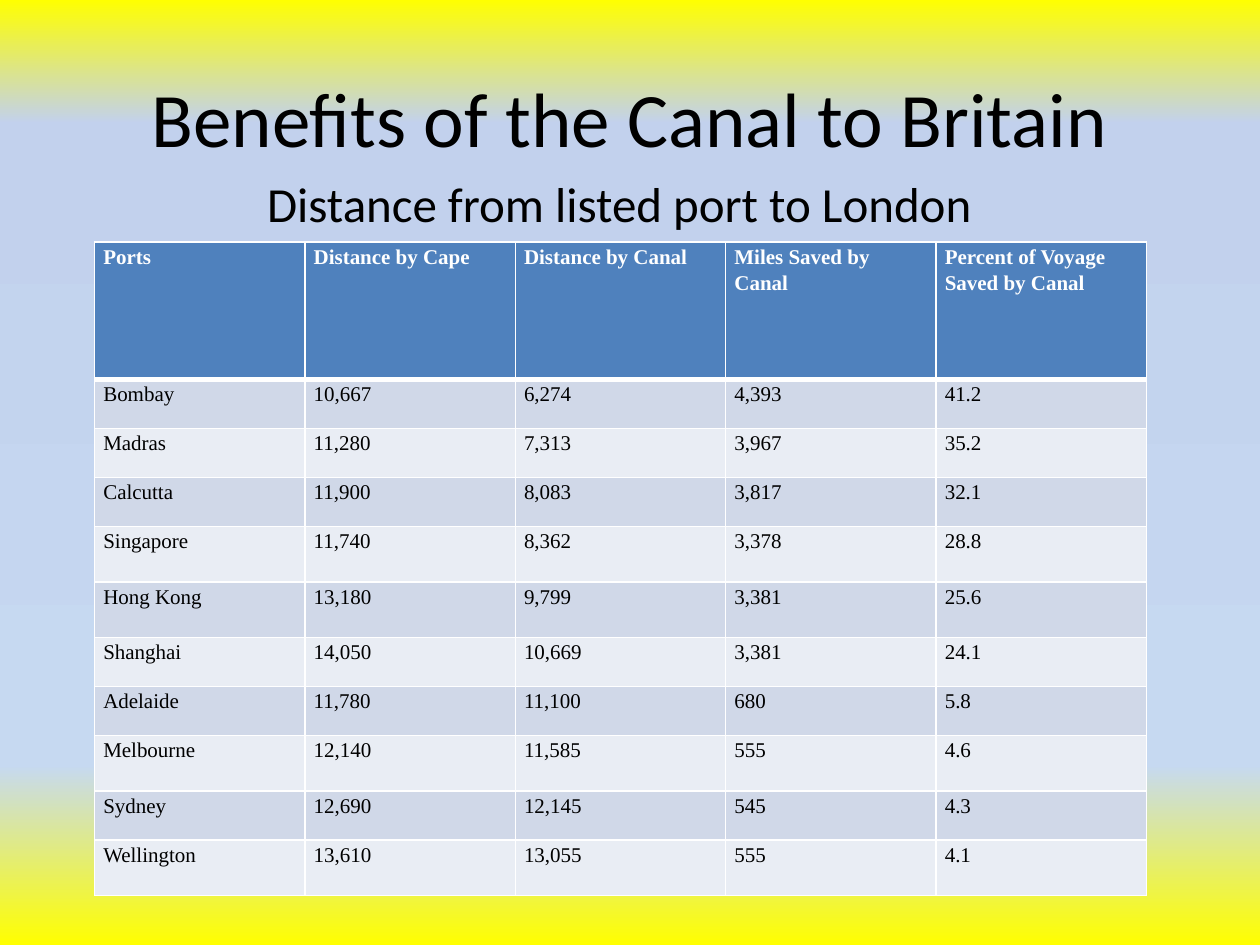
from dataclasses import dataclass

from lxml import etree
from pptx import Presentation
from pptx import util as u
from pptx.dml.color import RGBColor
from pptx.enum import text
from pptx.oxml import ns


@dataclass(frozen=True)
class Theme:
    heading_font: str = "Calibri"
    table_font: str = "Times New Roman"
    title_size: int = 44
    subtitle_size: int = 28
    table_size: int = 12
    black: str = "000000"
    white: str = "FFFFFF"
    header_fill: str = "4F81BD"
    bands: tuple = ("D0D8E8", "E9EDF4")
    background: tuple = ((0, "FFFF00"), (13, "C2D1ED"), (81, "C6D9F1"), (100, "FFFF00"))
    thin_line: int = 1
    thick_line: int = 3


@dataclass(frozen=True)
class Port:
    name: str
    by_cape: str
    by_canal: str
    miles_saved: str
    percent_saved: str
    height: float = 0.39

    def values(self) -> list[str]:
        return [self.name, self.by_cape, self.by_canal, self.miles_saved, self.percent_saved]


THEME = Theme()
TALL_ROW = 0.44
HEADER_HEIGHT = 1.09
COLUMN_WIDTH = 1.67
HEADERS = ["Ports", "Distance by Cape", "Distance by Canal", "Miles Saved by Canal",
           "Percent of Voyage Saved by Canal"]
PORTS = [
    Port("Bombay", "10,667", "6,274", "4,393", "41.2"),
    Port("Madras", "11,280", "7,313", "3,967", "35.2"),
    Port("Calcutta", "11,900", "8,083", "3,817", "32.1"),
    Port("Singapore", "11,740", "8,362", "3,378", "28.8", TALL_ROW),
    Port("Hong Kong", "13,180", "9,799", "3,381", "25.6", TALL_ROW),
    Port("Shanghai", "14,050", "10,669", "3,381", "24.1"),
    Port("Adelaide", "11,780", "11,100", "680", "5.8"),
    Port("Melbourne", "12,140", "11,585", "555", "4.6", TALL_ROW),
    Port("Sydney", "12,690", "12,145", "545", "4.3"),
    Port("Wellington", "13,610", "13,055", "555", "4.1", TALL_ROW),
]


def set_attributes(target, values: dict) -> None:
    for name, value in values.items():
        setattr(target, name, value)


def write_text(frame, content: str, size: int, font: str, color: str, bold: bool = False,
               **paragraph_format) -> None:
    paragraph = frame.paragraphs[0]
    set_attributes(paragraph, paragraph_format)
    run = paragraph.add_run()
    run.text = content
    set_attributes(run.font, {"size": u.Pt(size), "name": font, "bold": bold})
    run.font.color.rgb = RGBColor.from_string(color)


def paint_background(slide) -> None:
    """Fill the slide with the theme's gradient, running from top to bottom."""
    fill = slide.background.fill
    fill.gradient()
    fill.gradient_angle = 270
    stops = slide.background._cSld.find(".//" + ns.qn("a:gsLst"))
    for stop in list(stops):
        stops.remove(stop)
    for percent, color in THEME.background:
        stop = etree.SubElement(stops, ns.qn("a:gs"), pos=str(percent * 1000))
        etree.SubElement(stop, ns.qn("a:srgbClr"), val=color)


def add_headings(slide) -> None:
    title = slide.shapes.title
    set_attributes(title, {"left": u.Inches(0.5), "top": u.Inches(0.3),
                           "width": u.Inches(9), "height": u.Inches(1.25)})
    title.text_frame.vertical_anchor = text.MSO_ANCHOR.MIDDLE
    write_text(title.text_frame, "Benefits of the Canal to Britain", THEME.title_size,
               THEME.heading_font, THEME.black, alignment=text.PP_ALIGN.CENTER)
    subtitle = slide.shapes.add_textbox(u.Inches(0.83), u.Inches(1.33),
                                        u.Inches(8.17), u.Inches(0.57))
    set_attributes(subtitle.text_frame, {"word_wrap": True,
                                         "auto_size": text.MSO_AUTO_SIZE.SHAPE_TO_FIT_TEXT})
    write_text(subtitle.text_frame, "Distance from listed port to London", THEME.subtitle_size,
               THEME.heading_font, THEME.black, alignment=text.PP_ALIGN.CENTER)


def add_borders(cell, top: int, bottom: int) -> None:
    """Draw white borders; call before filling, as the fill must follow the lines."""
    properties = cell._tc.get_or_add_tcPr()
    widths = {"L": THEME.thin_line, "R": THEME.thin_line, "T": top, "B": bottom}
    for side, width in widths.items():
        line = etree.SubElement(properties, ns.qn(f"a:ln{side}"), w=str(u.Pt(width)))
        fill = etree.SubElement(line, ns.qn("a:solidFill"))
        etree.SubElement(fill, ns.qn("a:srgbClr"), val=THEME.white)


def format_cell(cell, content: str, row: int) -> None:
    header = row == 0
    set_attributes(cell, {"margin_left": u.Inches(0.07), "margin_right": u.Inches(0.07),
                          "margin_top": 0, "margin_bottom": 0})
    add_borders(cell, top=THEME.thick_line if row == 1 else THEME.thin_line,
                bottom=THEME.thick_line if header else THEME.thin_line)
    cell.fill.solid()
    color = THEME.header_fill if header else THEME.bands[(row - 1) % 2]
    cell.fill.fore_color.rgb = RGBColor.from_string(color)
    write_text(cell.text_frame, content, THEME.table_size, THEME.table_font,
               THEME.white if header else THEME.black, bold=header, line_spacing=1.15)


def add_distance_table(slide) -> None:
    rows = [HEADERS] + [port.values() for port in PORTS]
    heights = [HEADER_HEIGHT] + [port.height for port in PORTS]
    table = slide.shapes.add_table(
        len(rows), len(HEADERS), u.Inches(0.75), u.Inches(1.92),
        u.Inches(COLUMN_WIDTH * len(HEADERS)), u.Inches(sum(heights))).table
    for column in table.columns:
        column.width = u.Inches(COLUMN_WIDTH)
    for row, (values, height) in enumerate(zip(rows, heights)):
        table.rows[row].height = u.Inches(height)
        for column, content in enumerate(values):
            format_cell(table.cell(row, column), content, row)


def main() -> None:
    presentation = Presentation()
    set_attributes(presentation, {"slide_width": u.Inches(10), "slide_height": u.Inches(7.5)})
    slide = presentation.slides.add_slide(presentation.slide_layouts.get_by_name("Title Only"))
    paint_background(slide)
    add_distance_table(slide)
    add_headings(slide)
    presentation.save("out.pptx")


if __name__ == "__main__":
    main()
